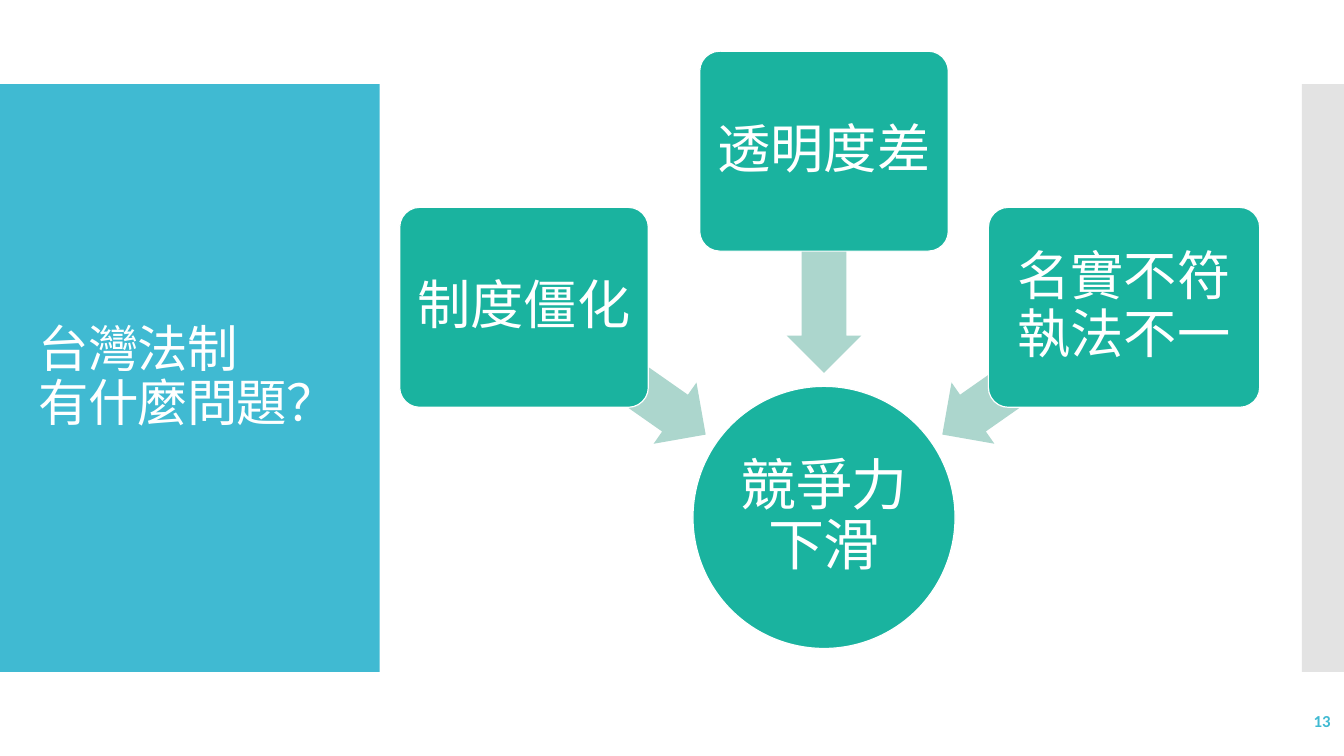
from dataclasses import dataclass
from math import cos, radians, sin

from lxml.etree import SubElement
from pptx import Presentation
from pptx.dml.color import RGBColor
from pptx.enum.shapes import MSO_SHAPE
from pptx.enum.text import MSO_ANCHOR, MSO_AUTO_SIZE, PP_ALIGN
from pptx.oxml.ns import qn
from pptx.shapes.autoshape import Shape
from pptx.slide import Slide
from pptx.util import Inches, Pt

# Grid: 160 columns by 90 rows of square cells
COLUMNS, ROWS = 160, 90
CELL = Inches(7.5) / ROWS


@dataclass(frozen=True)
class Theme:
    font: str = "Calibri"
    white: str = "FFFFFF"
    panel: str = "40BAD2"
    edge: str = "C8C8C8"
    node: str = "1AB39F"
    arrow: str = "ACD6CD"
    title_size: int = 36
    hub_size: int = 40
    cause_size: int = 38
    number_size: int = 12
    outline: float = 0.85


@dataclass(frozen=True)
class Area:
    """A rectangle in grid cells."""
    left: float
    top: float
    width: float
    height: float

    def emu(self) -> list[int]:
        return [round(cells * CELL) for cells in (self.left, self.top, self.width, self.height)]


@dataclass(frozen=True)
class Cause:
    """A box placed around the hub at an angle, clockwise from the right."""
    text: str
    angle: int
    width: float = 29.6


THEME = Theme()
HUB_COLUMN, HUB_ROW, HUB_DIAMETER = 98.1, 61.6, 31.2
ARROW_RADIUS, CAUSE_RADIUS = 30.4, 43.6
ARROW_LENGTH, ARROW_THICKNESS, CAUSE_HEIGHT = 26.4, 8.9, 23.8
CAUSES = (
    Cause("制度僵化", 215),
    Cause("透明度差", 270),
    Cause("名實不符執法不一", 325, width=32.3),
)


def around_hub(angle: float, radius: float, width: float, height: float) -> Area:
    """Area whose centre lies at the given angle and radius from the hub."""
    column = HUB_COLUMN + radius * cos(radians(angle))
    row = HUB_ROW + radius * sin(radians(angle))
    return Area(column - width / 2, row - height / 2, width, height)


def add_filled_shape(slide: Slide, kind: MSO_SHAPE, area: Area, color: str,
                     outlined: bool = False) -> Shape:
    shape = slide.shapes.add_shape(kind, *area.emu())
    shape.shadow.inherit = False
    shape.fill.solid()
    shape.fill.fore_color.rgb = RGBColor.from_string(color)
    if outlined:
        shape.line.color.rgb = RGBColor.from_string(THEME.white)
        shape.line.width = Pt(THEME.outline)
    else:
        shape.line.fill.background()
    return shape


def write_text(shape: Shape, text: str, *, size: int, color: str = THEME.white,
               align: PP_ALIGN = PP_ALIGN.CENTER, line_spacing: float = 0.9,
               bold: bool = False, inset: float | None = None,
               tracking: float = 0) -> None:
    frame = shape.text_frame
    frame.word_wrap = True
    frame.auto_size = MSO_AUTO_SIZE.NONE
    frame.vertical_anchor = MSO_ANCHOR.MIDDLE
    if inset is not None:
        frame.margin_left = frame.margin_right = Inches(inset)
        frame.margin_top = frame.margin_bottom = Inches(inset)
    frame.text = text
    paragraph = frame.paragraphs[0]
    paragraph.alignment = align
    paragraph.line_spacing = line_spacing
    for run in paragraph.runs:
        run.font.name = THEME.font
        run.font.size = Pt(size)
        run.font.bold = bold
        run.font.color.rgb = RGBColor.from_string(color)
        if tracking:
            run.font._element.set("spc", str(round(tracking * 100)))


def set_opacity(shape: Shape, share: float) -> None:
    color = shape.element.spPr.find(qn("a:solidFill"))[0]
    SubElement(color, qn("a:alpha")).set("val", str(round(share * 100000)))


def add_side_panels(slide: Slide) -> None:
    panel = add_filled_shape(slide, MSO_SHAPE.RECTANGLE, Area(0, 10, 45.2, 70), THEME.panel)
    edge = add_filled_shape(slide, MSO_SHAPE.RECTANGLE, Area(155, 10, 5, 70), THEME.edge)
    set_opacity(edge, 0.5)
    # The title sits in front of its panel
    title = slide.shapes.title
    title.left, title.top, title.width, title.height = Area(3.4, 14.8, 38.6, 60.4).emu()
    write_text(title, "台灣法制\v有什麼問題？", size=THEME.title_size,
               align=PP_ALIGN.LEFT, tracking=-0.6)
    panel.element.addnext(title.element)


def add_hub(slide: Slide) -> None:
    area = around_hub(0, 0, HUB_DIAMETER, HUB_DIAMETER)
    hub = add_filled_shape(slide, MSO_SHAPE.OVAL, area, THEME.node, outlined=True)
    write_text(hub, "競爭力下滑", size=THEME.hub_size, inset=0.03)


def add_cause(slide: Slide, cause: Cause) -> None:
    arrow_area = around_hub(cause.angle, ARROW_RADIUS, ARROW_LENGTH, ARROW_THICKNESS)
    arrow = add_filled_shape(slide, MSO_SHAPE.LEFT_ARROW, arrow_area, THEME.arrow)
    arrow.adjustments[0], arrow.adjustments[1] = 0.6, 0.5
    arrow.rotation = cause.angle

    box_area = around_hub(cause.angle, CAUSE_RADIUS, cause.width, CAUSE_HEIGHT)
    box = add_filled_shape(slide, MSO_SHAPE.ROUNDED_RECTANGLE, box_area, THEME.node,
                           outlined=True)
    box.adjustments[0] = 0.1
    write_text(box, cause.text, size=THEME.cause_size, inset=0.08)


def add_page_number(slide: Slide) -> None:
    number = slide.shapes.add_textbox(*Area(139.6, 83.4, 20, 4.8).emu())
    write_text(number, "13", size=THEME.number_size, color=THEME.panel,
               align=PP_ALIGN.RIGHT, line_spacing=1.0, bold=True)


def main() -> None:
    presentation = Presentation()
    presentation.slide_width = round(COLUMNS * CELL)
    presentation.slide_height = round(ROWS * CELL)
    slide = presentation.slides.add_slide(presentation.slide_layouts.get_by_name("Title Only"))

    add_side_panels(slide)
    add_hub(slide)
    for cause in CAUSES:
        add_cause(slide, cause)
    add_page_number(slide)
    presentation.save("out.pptx")


if __name__ == "__main__":
    main()
